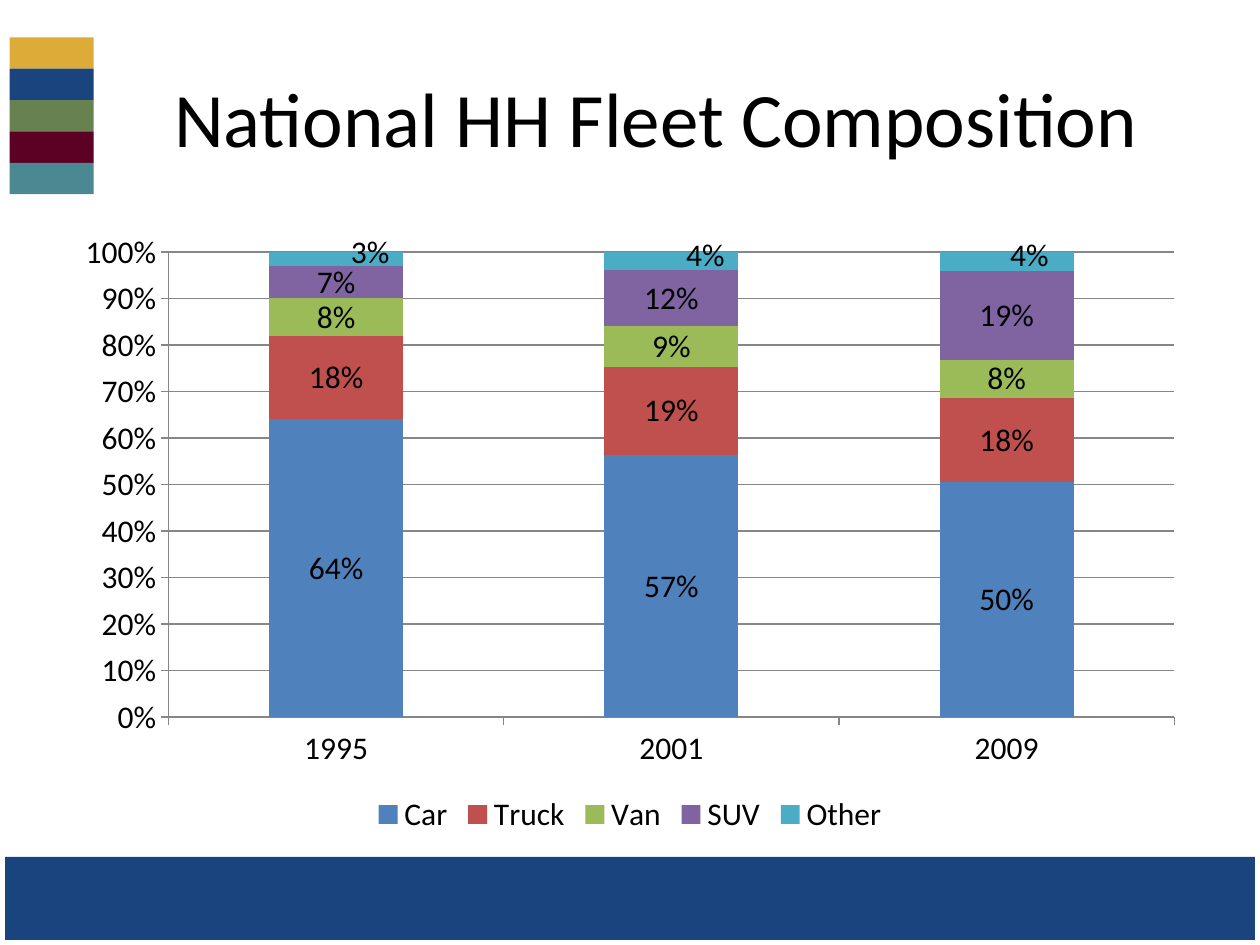
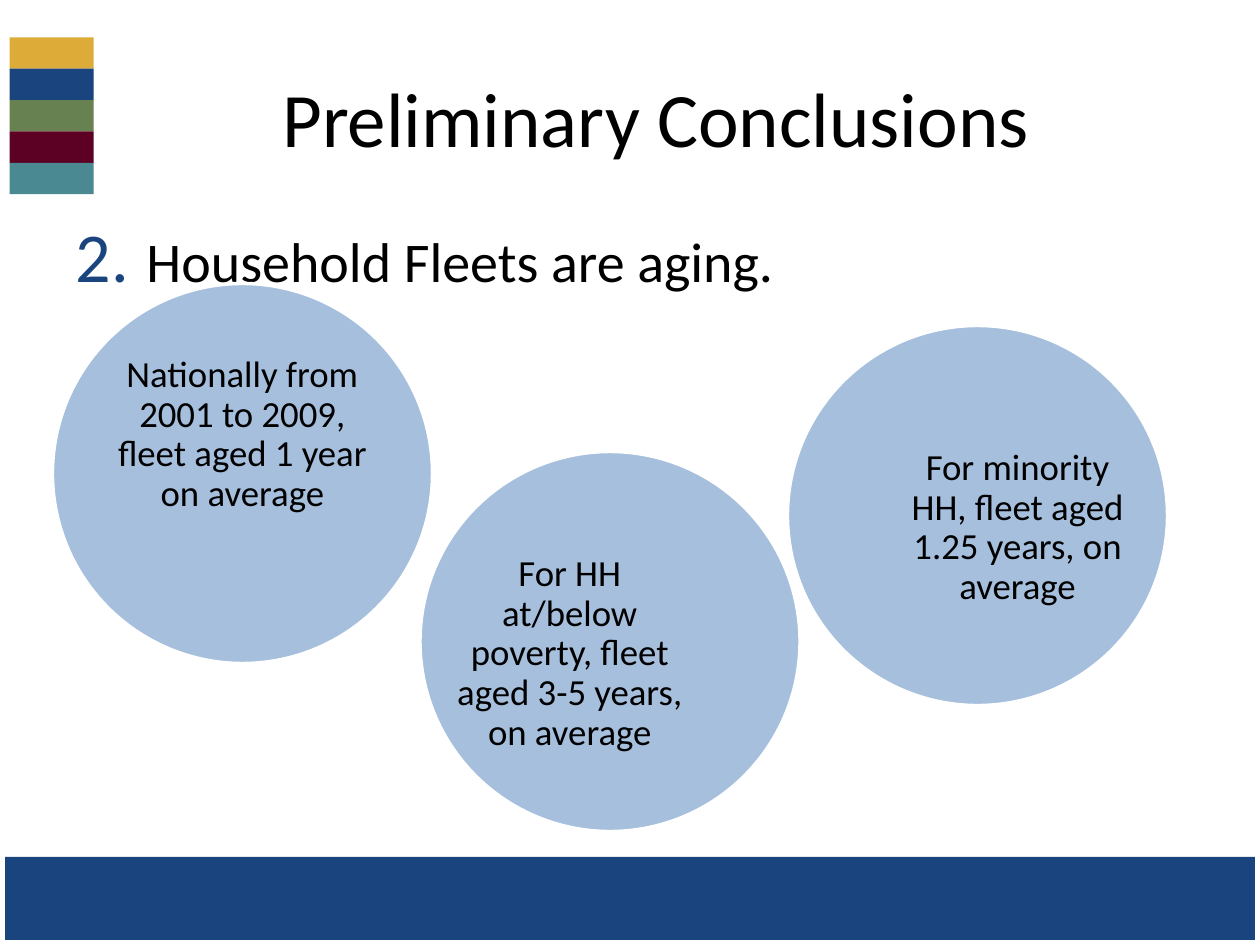
from lxml import etree
from pptx import Presentation
from pptx import util as u
from pptx.chart import data as chart_data
from pptx.dml.color import RGBColor
from pptx.enum import chart as charts, shapes, text
from pptx.oxml import ns

BLACK = RGBColor(0x00, 0x00, 0x00)
WHITE = RGBColor(0xFF, 0xFF, 0xFF)
NAVY = RGBColor(0x19, 0x44, 0x7E)
GOLD = RGBColor(0xDD, 0xAB, 0x37)
MOSS = RGBColor(0x67, 0x82, 0x50)
WINE = RGBColor(0x5C, 0x00, 0x24)
TEAL = RGBColor(0x4B, 0x89, 0x92)
GRID_GREY = RGBColor(0x86, 0x86, 0x86)
CAR_BLUE = RGBColor(0x4F, 0x81, 0xBD)
TRUCK_RED = RGBColor(0xC0, 0x50, 0x4D)
VAN_GREEN = RGBColor(0x9B, 0xBB, 0x59)
SUV_PURPLE = RGBColor(0x80, 0x64, 0xA2)
OTHER_AQUA = RGBColor(0x4B, 0xAC, 0xC6)

# Boxes are left, top, width, height in points
PAGE = (0, 0, 720, 540)
STRIPES = (5.5, 21.3, 48, 89.7)
FOOTER = (0, 489.6, 720, 50.4)
TITLE = (66, 21.6, 618, 90)
CONTENT = (36, 126, 648, 354)

STRIPE_COLORS = (GOLD, NAVY, MOSS, WINE, TEAL)
YEARS = ("1995", "2001", "2009")
FLEET = (
    ("Car", (0.64, 0.57, 0.5), CAR_BLUE),
    ("Truck", (0.18, 0.19, 0.18), TRUCK_RED),
    ("Van", (0.08, 0.09, 0.08), VAN_GREEN),
    ("SUV", (0.07, 0.12, 0.19), SUV_PURPLE),
    ("Other", (0.03, 0.04, 0.04), OTHER_AQUA),
)
# Sideways and downward, as fractions of the chart size
OTHER_LABEL_SHIFTS = ((0.03, -0.01), (0.03, -0.01), (0.02, -0.01))

# Circle top and text box, the latter relative to its circle
CIRCLE_SIZE = 217.2
CIRCLE_STEP = 210
FINDINGS = (
    ("Nationally from 2001 to 2009, fleet aged 1 year on average",
     36, (29, 37.7, 159, 98)),
    ("For HH at/below poverty, fleet aged 3-5 years, on average",
     132, (20.6, 55.7, 130, 120)),
    ("For minority HH, fleet aged 1.25 years, on average",
     60, (66.5, 55.8, 130, 120)),
)


def points(box):
    return [u.Pt(length) for length in box]


def set_values(target, values):
    for name, value in values.items():
        setattr(target, name, value)


def set_font(font, size):
    set_values(font, {"name": "Calibri", "size": u.Pt(size)})
    font.color.rgb = BLACK


def place(shape, box):
    set_values(shape, dict(zip(("left", "top", "width", "height"), points(box))))


def add_filled(slide, kind, box, color):
    shape = slide.shapes.add_shape(kind, *points(box))
    shape.shadow.inherit = False
    shape.fill.solid()
    shape.fill.fore_color.rgb = color
    shape.line.fill.background()
    return shape


def outline(shape, width):
    shape.line.color.rgb = WHITE
    shape.line.width = u.Pt(width)


def add_child(parent, tag, **attributes):
    values = {name: str(value) for name, value in attributes.items()}
    return etree.SubElement(parent, ns.qn(tag), values)


def decorate_master(presentation, slide):
    """Draw the band, stripes and white frame, then move them to the master."""
    rectangle = shapes.MSO_SHAPE.RECTANGLE
    parts = [add_filled(slide, rectangle, FOOTER, NAVY)]
    left, top, width, height = STRIPES
    stripe_height = height / len(STRIPE_COLORS)
    for index, color in enumerate(STRIPE_COLORS):
        box = (left, top + index * stripe_height, width, stripe_height)
        parts.append(add_filled(slide, rectangle, box, color))
    frame = add_filled(slide, rectangle, PAGE, WHITE)
    frame.fill.background()
    outline(frame, 6)
    parts.append(frame)
    tree = presentation.slide_master.shapes.element
    for index, part in enumerate(parts):
        part.element.nvSpPr.cNvPr.set("id", str(100 + index))
        tree.insert(2 + index, part.element)


def add_title(slide, box, words):
    title = slide.shapes.title
    place(title, box)
    title.text_frame.text = words
    title.text_frame.vertical_anchor = text.MSO_ANCHOR.MIDDLE
    paragraph = title.text_frame.paragraphs[0]
    paragraph.alignment = text.PP_ALIGN.CENTER
    set_font(paragraph.font, 44)


def style_axes(chart):
    for axis in (chart.category_axis, chart.value_axis):
        set_values(axis, {"major_tick_mark": charts.XL_TICK_MARK.OUTSIDE,
                          "minor_tick_mark": charts.XL_TICK_MARK.NONE})
        axis.format.line.color.rgb = GRID_GREY
    set_values(chart.value_axis, {"minimum_scale": 0, "maximum_scale": 1,
                                  "major_unit": 0.1,
                                  "has_major_gridlines": True})
    set_values(chart.value_axis.tick_labels,
               {"number_format": "0%", "number_format_is_linked": False})
    chart.value_axis.major_gridlines.format.line.color.rgb = GRID_GREY


def shift_labels(series, shifts):
    """Move the labels of a series, without leader lines."""
    for index in range(len(shifts)):
        series.points[index].data_label.position = charts.XL_LABEL_POSITION.CENTER
    labels_element = series.data_labels._element
    for leader in labels_element.findall(ns.qn("c:showLeaderLines")):
        leader.set("val", "0")
    for label, (x, y) in zip(labels_element.findall(ns.qn("c:dLbl")), shifts):
        layout = etree.Element(ns.qn("c:layout"))
        manual = add_child(layout, "c:manualLayout")
        add_child(manual, "c:x", val=x)
        add_child(manual, "c:y", val=y)
        label.insert(1, layout)


def add_fleet_chart(slide, box):
    fleet_data = chart_data.CategoryChartData(number_format="0%")
    fleet_data.categories = YEARS
    for name, shares, _ in FLEET:
        fleet_data.add_series(name, shares)
    chart = slide.shapes.add_chart(charts.XL_CHART_TYPE.COLUMN_STACKED_100,
                                   *points(box), fleet_data).chart
    set_values(chart, {"has_title": False, "has_legend": True})
    set_font(chart.font, 18)
    set_values(chart.legend, {"position": charts.XL_LEGEND_POSITION.BOTTOM,
                              "include_in_layout": False})
    style_axes(chart)
    plot = chart.plots[0]
    set_values(plot, {"gap_width": 150, "overlap": 100,
                      "vary_by_categories": False})
    for series, (_, _, color) in zip(plot.series, FLEET):
        series.format.fill.solid()
        series.format.fill.fore_color.rgb = color
        set_values(series.data_labels,
                   {"show_value": True, "number_format": "0%",
                    "number_format_is_linked": False})
    shift_labels(plot.series[-1], OTHER_LABEL_SHIFTS)


def add_conclusion(slide, box, words, number):
    body = slide.placeholders[1]
    place(body, box)
    body.text_frame.text = words
    paragraph = body.text_frame.paragraphs[0]
    paragraph.space_before = u.Pt(0)
    properties = paragraph._p.get_or_add_pPr()
    indents = {"marL": u.Pt(40.5), "indent": -u.Pt(40.5)}
    for name, length in indents.items():
        properties.set(name, str(int(length)))
    bullet_color = add_child(properties, "a:buClr")
    add_child(bullet_color, "a:srgbClr", val=NAVY)
    add_child(properties, "a:buSzPct", val=125000)
    add_child(properties, "a:buFont", typeface="+mj-lt")
    add_child(properties, "a:buAutoNum", type="arabicPeriod", startAt=number)
    set_font(paragraph.font, 32)


def add_finding(slide, box, words, text_box):
    left, top = box[:2]
    circle = add_filled(slide, shapes.MSO_SHAPE.OVAL, box, CAR_BLUE)
    outline(circle, 2)
    color = circle.fill._xPr.find(".//" + ns.qn("a:srgbClr"))
    add_child(color, "a:alpha", val=50000)

    x, y, width, height = text_box
    label = slide.shapes.add_textbox(*points((left + x, top + y, width, height)))
    frame = label.text_frame
    set_values(frame, {"word_wrap": True, "text": words,
                       "vertical_anchor": text.MSO_ANCHOR.MIDDLE,
                       "margin_left": 0, "margin_right": 0,
                       "margin_top": 0, "margin_bottom": 0})
    paragraph = frame.paragraphs[0]
    set_values(paragraph, {"alignment": text.PP_ALIGN.CENTER,
                           "line_spacing": 0.9, "space_after": u.Pt(7.35)})
    set_font(paragraph.font, 21)


def add_findings(slide, box):
    left, top = box[:2]
    for index, (words, drop, text_box) in enumerate(FINDINGS):
        circle_box = (left - 6 + index * CIRCLE_STEP, top + drop,
                      CIRCLE_SIZE, CIRCLE_SIZE)
        add_finding(slide, circle_box, words, text_box)


def main():
    presentation = Presentation()
    set_values(presentation, {"slide_width": u.Pt(PAGE[2]),
                              "slide_height": u.Pt(PAGE[3])})
    layouts = presentation.slide_layouts

    # Fleet composition
    slide = presentation.slides.add_slide(layouts.get_by_name("Title Only"))
    decorate_master(presentation, slide)
    add_title(slide, TITLE, "National HH Fleet Composition")
    add_fleet_chart(slide, CONTENT)

    # Conclusions
    slide = presentation.slides.add_slide(layouts.get_by_name("Title and Content"))
    add_title(slide, TITLE, "Preliminary Conclusions")
    add_conclusion(slide, CONTENT, "Household Fleets are aging.", 2)
    add_findings(slide, CONTENT)

    presentation.save("out.pptx")


if __name__ == "__main__":
    main()
